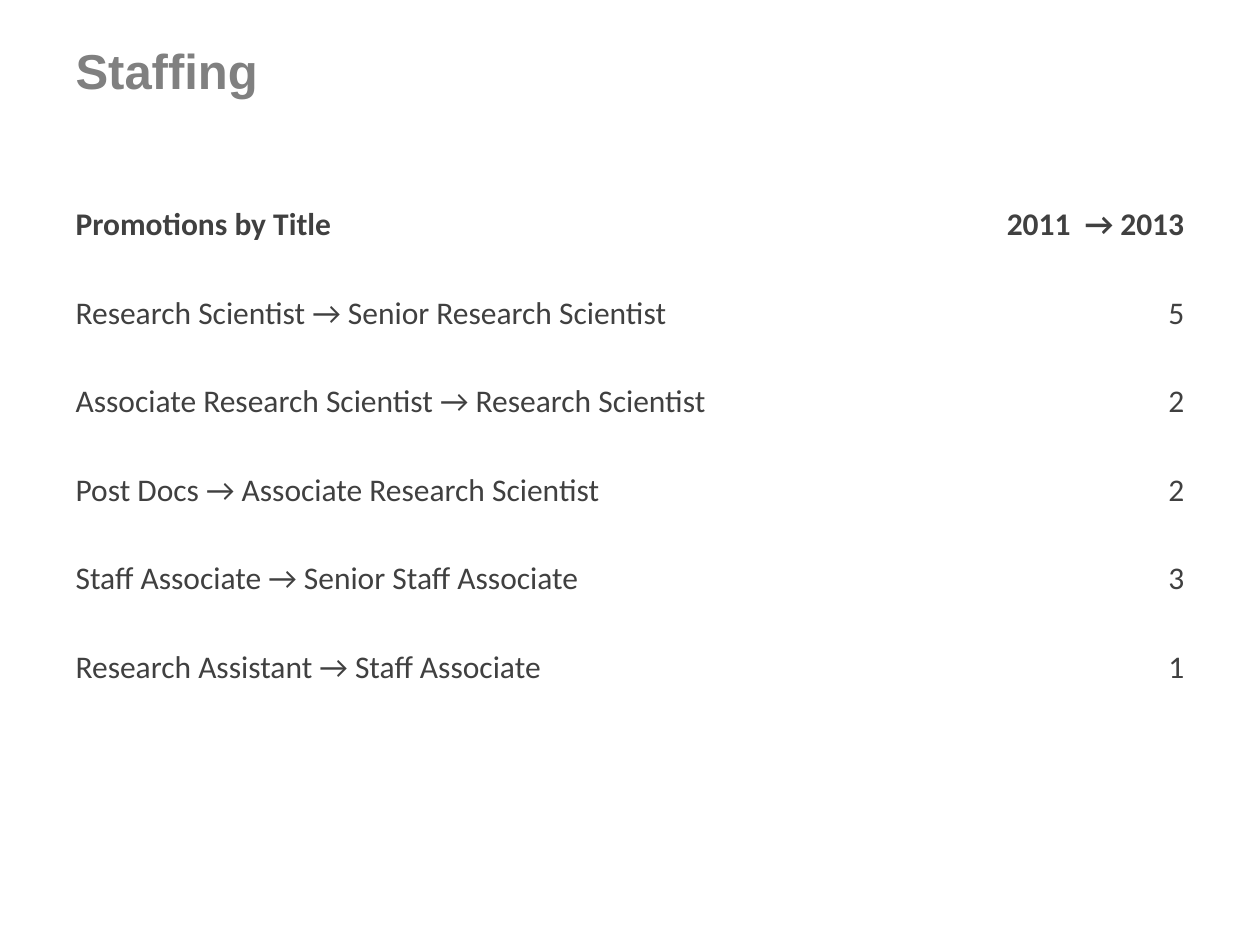
import pptx
import pptx.dml.color
import pptx.enum.text
import pptx.util

TITLE_GREY = pptx.dml.color.RGBColor(0x80, 0x80, 0x80)
TEXT_GREY = pptx.dml.color.RGBColor(0x40, 0x40, 0x40)
ALIGN = pptx.enum.text.PP_ALIGN
ANCHOR = pptx.enum.text.MSO_ANCHOR

PROMOTIONS = [
    ("Promotions by Title", "2011  → 2013"),
    ("Research Scientist → Senior Research Scientist", "5"),
    ("Associate Research Scientist → Research Scientist", "2"),
    ("Post Docs → Associate Research Scientist", "2"),
    ("Staff Associate → Senior Staff Associate", "3"),
    ("Research Assistant → Staff Associate", "1"),
]


class StaffingSlide:
    """Holds the style and the slide; lengths are percentages of the slide's size."""

    title_font, title_size = "Arial", 28
    table_font, table_size = "Calibri", 18

    def __init__(self, presentation):
        self.width = presentation.slide_width
        self.height = presentation.slide_height
        self.slide = presentation.slides.add_slide(presentation.slide_layouts[5])

    def across(self, percent):
        return round(self.width * percent / 100)

    def down(self, percent):
        return round(self.height * percent / 100)

    def box(self, left, top, width, height):
        return self.across(left), self.down(top), self.across(width), self.down(height)

    def format_runs(self, paragraph, name, size, color, bold):
        for run in paragraph.runs:
            run.font.name = name
            run.font.size = pptx.util.Pt(size)
            run.font.color.rgb = color
            run.font.bold = bold

    def title(self, text, left, top, width, height):
        shape = self.slide.shapes.title
        shape.left, shape.top, shape.width, shape.height = self.box(left, top, width, height)
        frame = shape.text_frame
        frame.text = text
        frame.word_wrap = True
        frame.auto_size = pptx.enum.text.MSO_AUTO_SIZE.SHAPE_TO_FIT_TEXT
        frame.vertical_anchor = ANCHOR.MIDDLE
        paragraph = frame.paragraphs[0]
        paragraph.alignment = ALIGN.LEFT
        paragraph.line_spacing = 0.85
        self.format_runs(paragraph, self.title_font, self.title_size, TITLE_GREY, True)

    def table(self, rows, left, top, column_widths, height):
        """Draws an unfilled table with a bold first row and a right-aligned last column."""
        frame = self.slide.shapes.add_table(
            len(rows), len(column_widths), *self.box(left, top, sum(column_widths), height))
        table = frame.table
        table.first_row = table.horz_banding = False
        for column, width in zip(table.columns, column_widths):
            column.width = self.across(width)
        for row_index, values in enumerate(rows):
            for column_index, value in enumerate(values):
                cell = table.cell(row_index, column_index)
                cell.fill.background()
                cell.vertical_anchor = ANCHOR.TOP
                paragraph = cell.text_frame.paragraphs[0]
                paragraph.text = value
                is_last = column_index == len(values) - 1
                paragraph.alignment = ALIGN.RIGHT if is_last else ALIGN.LEFT
                self.format_runs(paragraph, self.table_font, self.table_size,
                                 TEXT_GREY, row_index == 0)


def main():
    presentation = pptx.Presentation()
    presentation.slide_width = pptx.util.Inches(10)
    presentation.slide_height = pptx.util.Inches(7.5)
    staffing = StaffingSlide(presentation)
    staffing.title("Staffing", left=5, top=4.53, width=67.3, height=6.8)
    staffing.table(PROMOTIONS, left=5, top=21.07, column_widths=(62.6, 27.4), height=56.27)
    presentation.save("out.pptx")


if __name__ == "__main__":
    main()
